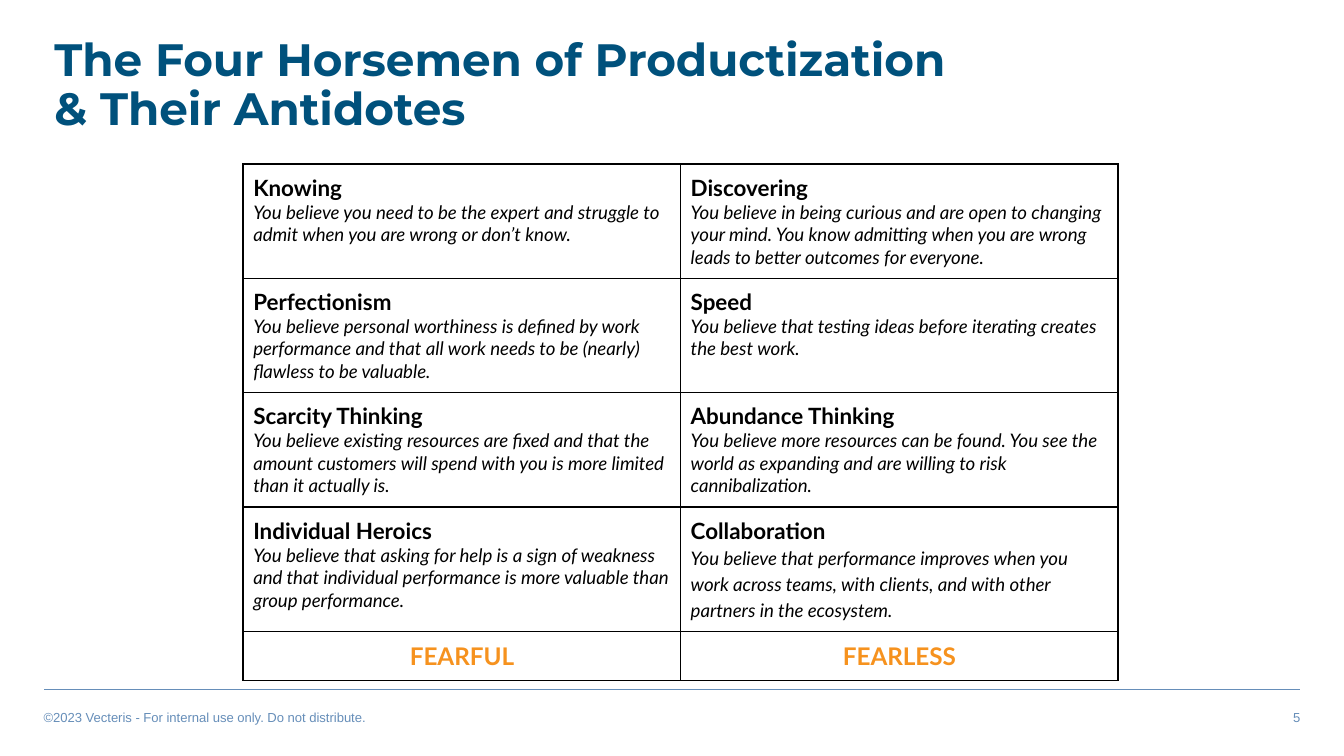
import pptx
import pptx.util
import pptx.dml.color
import pptx.enum.shapes
import pptx.enum.text
import pptx.oxml
import pptx.oxml.ns
from dataclasses import dataclass
from lxml import etree
from pptx.util import Inches


@dataclass(frozen=True)
class Theme:
    navy: str = "00517C"
    steel: str = "668EB9"
    orange: str = "F6921E"
    black: str = "000000"
    white: str = "FFFFFF"
    title_size: float = 24.3
    verdict_size: float = 13
    heading_size: float = 12
    body_size: float = 10
    footer_size: float = 7


theme = Theme()
rgb = pptx.dml.color.RGBColor.from_string
qn = pptx.oxml.ns.qn
align = pptx.enum.text.PP_ALIGN
margin = Inches(0.15) // 2


def write(frame, text, *, size, color, font="Lato", bold=False, italic=False,
          alignment=align.LEFT, spacing=1.0, add=False):
    """Write one paragraph, into the first one or a new one."""
    paragraph = frame.add_paragraph() if add else frame.paragraphs[0]
    paragraph.alignment = alignment
    paragraph.line_spacing = spacing
    run = paragraph.add_run()
    run.text = text
    run.font.name = font
    run.font.size = pptx.util.Pt(size)
    run.font.bold = bold
    run.font.italic = italic
    run.font.color.rgb = rgb(color)


def add_box(left, top, width, height):
    """Add a wrapping text box and return its text frame."""
    frame = slide.shapes.add_textbox(
        Inches(left), Inches(top), Inches(width), Inches(height)).text_frame
    frame.word_wrap = True
    frame.margin_left = frame.margin_right = margin
    frame.margin_top = frame.margin_bottom = margin // 2
    return frame


# Widescreen slide, 16 to 9
deck = pptx.Presentation()
deck.slide_width = Inches(10)
deck.slide_height = Inches(10) * 9 // 16
slide = deck.slides.add_slide(deck.slide_layouts[6])

# Footer rule
footer_rule = slide.shapes.add_connector(
    pptx.enum.shapes.MSO_CONNECTOR.STRAIGHT,
    Inches(0.33), Inches(5.13), Inches(9.67), Inches(5.13))
footer_rule.line.color.rgb = rgb(theme.steel)
footer_rule.line.width = pptx.util.Pt(1)
etree.SubElement(footer_rule._element.spPr, qn("a:effectLst"))

# Footer text and page number
for left, text, alignment in [
    (0.25, "©2023 Vecteris - For internal use only. Do not distribute.", align.LEFT),
    (5.75, "5", align.RIGHT),
]:
    write(add_box(left, 5.24, 4, 0.19), text, size=theme.footer_size,
          color=theme.steel, font="Arial", alignment=alignment)

# Title
write(add_box(0.33, 0.24, 6.94, 0.57),
      "The Four Horsemen of Productization & Their Antidotes",
      size=theme.title_size, color=theme.navy, font="Montserrat", bold=True, spacing=0.9)

# Each horseman beside its antidote: heading, description, line spacing
pairs = [
    [("Knowing", "You believe you need to be the expert and struggle to admit "
      "when you are wrong or don’t know.", 1.0),
     ("Discovering", "You believe in being curious and are open to changing your mind. "
      "You know admitting when you are wrong leads to better outcomes for everyone.", 1.0)],
    [("Perfectionism", "You believe personal worthiness is defined by work performance "
      "and that all work needs to be (nearly) flawless to be valuable.", 1.0),
     ("Speed", "You believe that testing ideas before iterating creates the best work.", 1.0)],
    [("Scarcity Thinking", "You believe existing resources are fixed and that the amount "
      "customers will spend with you is more limited than it actually is.", 1.0),
     ("Abundance Thinking", "You believe more resources can be found. You see the world "
      "as expanding and are willing to risk cannibalization.", 1.0)],
    [("Individual Heroics", "You believe that asking for help is a sign of weakness and "
      "that individual performance is more valuable than group performance.", 1.0),
     ("Collaboration", "You believe that performance improves when you work across teams, "
      "with clients, and with other partners in the ecosystem.", 1.15)],
]
verdicts = ["FEARFUL", "FEARLESS"]
row_heights = [0.8, 0.8, 0.8, 0.86, 0.32]
table_width = Inches(6.51)

# Table grid
antidotes = slide.shapes.add_table(
    len(row_heights), len(verdicts), Inches(1.81), Inches(1.22),
    table_width, Inches(sum(row_heights))).table
antidotes.first_row = antidotes.horz_banding = False
for column in antidotes.columns:
    column.width = table_width // len(verdicts)
for row, height in zip(antidotes.rows, row_heights):
    row.height = Inches(height)

# Cell margins, borders and fill
for cell in antidotes.iter_cells():
    cell.margin_left = cell.margin_right = margin
    cell.margin_top = cell.margin_bottom = margin
    cell_format = cell._tc.get_or_add_tcPr()
    for side in ("lnL", "lnR", "lnT", "lnB"):
        border = etree.SubElement(cell_format, qn(f"a:{side}"), w=str(pptx.util.Pt(1)))
        border_fill = etree.SubElement(border, qn("a:solidFill"))
        etree.SubElement(border_fill, qn("a:srgbClr"), val=theme.black)
    cell.fill.solid()
    cell.fill.fore_color.rgb = rgb(theme.white)

# Horsemen and antidotes
for row_index, pair in enumerate(pairs):
    for column_index, (heading, description, spacing) in enumerate(pair):
        frame = antidotes.cell(row_index, column_index).text_frame
        write(frame, heading, size=theme.heading_size, color=theme.black, bold=True)
        write(frame, description, size=theme.body_size, color=theme.black,
              italic=True, spacing=spacing, add=True)

# Verdict row
for column_index, verdict in enumerate(verdicts):
    write(antidotes.cell(len(pairs), column_index).text_frame, verdict,
          size=theme.verdict_size, color=theme.orange, bold=True, alignment=align.CENTER)

deck.save("out.pptx")
